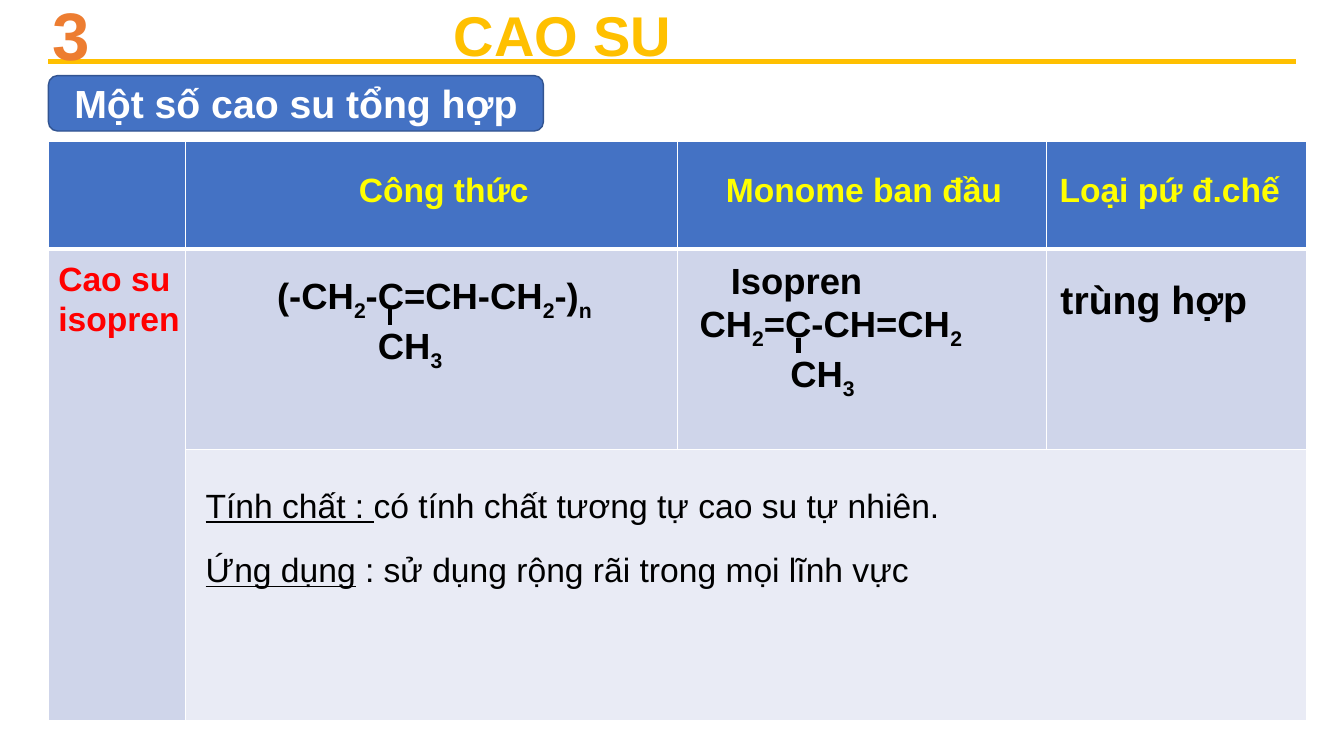
from lxml import etree
from pptx import Presentation
from pptx.dml.color import RGBColor
from pptx.enum.shapes import MSO_CONNECTOR, MSO_SHAPE
from pptx.enum.text import MSO_ANCHOR, MSO_AUTO_SIZE, PP_ALIGN
from pptx.oxml.ns import qn
from pptx.util import Inches, Pt

STRAIGHT = MSO_CONNECTOR.STRAIGHT
ROUNDED = MSO_SHAPE.ROUNDED_RECTANGLE
TOP, MIDDLE = MSO_ANCHOR.TOP, MSO_ANCHOR.MIDDLE
LEFT, CENTER = PP_ALIGN.LEFT, PP_ALIGN.CENTER
GROW = MSO_AUTO_SIZE.SHAPE_TO_FIT_TEXT

WHITE = RGBColor(0xFF, 0xFF, 0xFF)
BLACK = RGBColor(0x00, 0x00, 0x00)
GOLD = RGBColor(0xFF, 0xC0, 0x00)
ORANGE = RGBColor(0xED, 0x7D, 0x31)
YELLOW = RGBColor(0xFF, 0xFF, 0x00)
RED = RGBColor(0xFF, 0x00, 0x00)
BLUE = RGBColor(0x44, 0x72, 0xC4)
DARK_BLUE = RGBColor(0x32, 0x54, 0x91)
BAND = RGBColor(0xCF, 0xD5, 0xEA)
PALE = RGBColor(0xE9, 0xEB, 0xF5)

PLAIN, SUB, UNDER = "plain", "sub", "under"

TITLE = ("CAO SU", (4.4, -0.04, 3.52, 0.77), 40, GOLD)
BADGE = ("Một số cao su tổng hợp", (0.48, 0.75, 4.91, 0.55), 28, WHITE)
LABELS = [
    ("3", (0.42, -0.12, 0.7, 0.91), 48, ORANGE),
    ("Công thức", (3.46, 1.63, 2.32, 0.5), 24, YELLOW),
    ("Monome ban đầu", (7.1, 1.63, 2.99, 0.5), 24, YELLOW),
    ("Loại pứ đ.chế", (10.41, 1.63, 2.45, 0.5), 24, YELLOW),
    ("Cao su isopren", (0.48, 2.51, 1.46, 0.91), 24, RED),
    ("Isopren", (7.15, 2.51, 2.84, 0.54), 26, BLACK),
    ("trùng hợp", (10.42, 2.68, 2.33, 0.57), 28, BLACK),
]
NOTES = [
    ([("Tính chất : ", UNDER), ("có tính chất tương tự cao su tự nhiên.", PLAIN)],
     (1.94, 4.76, 10.65, 0.5)),
    ([("Ứng dụng", UNDER), (" : sử dụng rộng rãi trong mọi lĩnh vực", PLAIN)],
     (1.94, 5.4, 10.91, 0.5)),
]
METHYL = [("CH", PLAIN), ("3", SUB)]
FORMULAS = [
    ([("(-CH", PLAIN), ("2", SUB), ("-C=CH-CH", PLAIN), ("2", SUB),
      ("-)", PLAIN), ("n", SUB)], (2.65, 2.66, 3.54, 0.98), 1.0, (3.87, 3.07)),
    ([("CH", PLAIN), ("2", SUB), ("=C-CH=CH", PLAIN), ("2", SUB)],
     (6.84, 2.94, 3.47, 0.98), 0.9, (7.92, 3.35)),
]
BOND_LENGTH = 0.15

TABLE_PLACE = (0.48, 1.4, 12.48, 5.75)
COLUMN_WIDTHS = [1.36, 4.88, 3.66, 2.58]
ROW_HEIGHTS = [1.07, 1.99, 2.69]
ROW_FILLS = [BLUE, BAND, PALE]


def write_line(para, spans, size, color, bold=True):
    """Add styled spans to a paragraph."""
    for text, style in spans:
        span = para.add_run()
        span.text = text
        formats = {"name": "Arial", "size": Pt(size), "bold": bold,
                   "underline": style == UNDER}
        for name, value in formats.items():
            setattr(span.font, name, value)
        span.font.color.rgb = color
        if style == SUB:
            span._r.get_or_add_rPr().set("baseline", "-25000")


def add_text(page, place, lines, size, color, bold=True, indent=0):
    """Add a text box, indenting the lines after the first."""
    frame = page.shapes.add_textbox(*map(Inches, place)).text_frame
    frame.word_wrap = True
    frame.auto_size = GROW
    for index, spans in enumerate(lines):
        para = frame.add_paragraph() if index else frame.paragraphs[0]
        if index:
            para._p.get_or_add_pPr().set("marL", str(Inches(indent)))
        write_line(para, spans, size, color, bold)


def add_rule(page, start, end, color):
    """Add a straight line without a shadow."""
    rule = page.shapes.add_connector(STRAIGHT, *map(Inches, start + end))
    rule.line.color.rgb = color
    rule.line.width = Pt(3)
    etree.SubElement(rule._element.spPr, qn("a:effectLst"))


def style_cell(cell, fill, bottom):
    """Give a cell white borders and a solid fill."""
    properties = cell._tc.get_or_add_tcPr()
    for tag, width in (("lnL", 1), ("lnR", 1), ("lnT", 1), ("lnB", bottom)):
        border = etree.SubElement(properties, qn("a:" + tag), w=str(Pt(width)))
        paint = etree.SubElement(border, qn("a:solidFill"))
        etree.SubElement(paint, qn("a:srgbClr"), val=str(WHITE))
    cell.fill.solid()
    cell.fill.fore_color.rgb = fill


def add_grid(page):
    """Add the table with its merged cells."""
    table = page.shapes.add_table(len(ROW_HEIGHTS), len(COLUMN_WIDTHS),
                                  *map(Inches, TABLE_PLACE)).table
    for column, width in zip(table.columns, COLUMN_WIDTHS):
        column.width = Inches(width)
    for index, (row, height) in enumerate(zip(table.rows, ROW_HEIGHTS)):
        row.height = Inches(height)
        for cell in row.cells:
            style_cell(cell, ROW_FILLS[index], 1 if index else 3)
    table.cell(1, 0).merge(table.cell(2, 0))
    table.cell(2, 1).merge(table.cell(2, 3))


def add_heading(page):
    """Fill the title and draw the badge below it."""
    badge = page.shapes.add_shape(ROUNDED, *map(Inches, BADGE[1]))
    badge.shadow.inherit = False
    badge.fill.solid()
    badge.fill.fore_color.rgb = BLUE
    badge.line.color.rgb = DARK_BLUE
    badge.line.width = Pt(1)
    title = page.shapes.title
    title.left, title.top, title.width, title.height = map(Inches, TITLE[1])
    for shape, (text, place, size, color), anchor, align in (
            (title, TITLE, TOP, LEFT), (badge, BADGE, MIDDLE, CENTER)):
        frame = shape.text_frame
        frame.word_wrap = True
        frame.vertical_anchor = anchor
        frame.paragraphs[0].alignment = align
        write_line(frame.paragraphs[0], [(text, PLAIN)], size, color)
    title.text_frame.auto_size = GROW


def main():
    """Build the synthetic rubber slide."""
    deck = Presentation()
    deck.slide_width, deck.slide_height = Inches(13.33), Inches(7.5)
    page = deck.slides.add_slide(deck.slide_layouts[5])
    add_rule(page, (0.48, 0.61), (12.85, 0.61), GOLD)
    add_heading(page)
    add_grid(page)
    for text, place, size, color in LABELS:
        add_text(page, place, [[(text, PLAIN)]], size, color)
    for spans, place in NOTES:
        add_text(page, place, [spans], 24, BLACK, bold=False)
    for chain, place, indent, (x, y) in FORMULAS:
        add_text(page, place, [chain, METHYL], 26, BLACK, indent=indent)
        add_rule(page, (x, y), (x, y + BOND_LENGTH), BLACK)
    deck.save("out.pptx")


if __name__ == "__main__":
    main()
